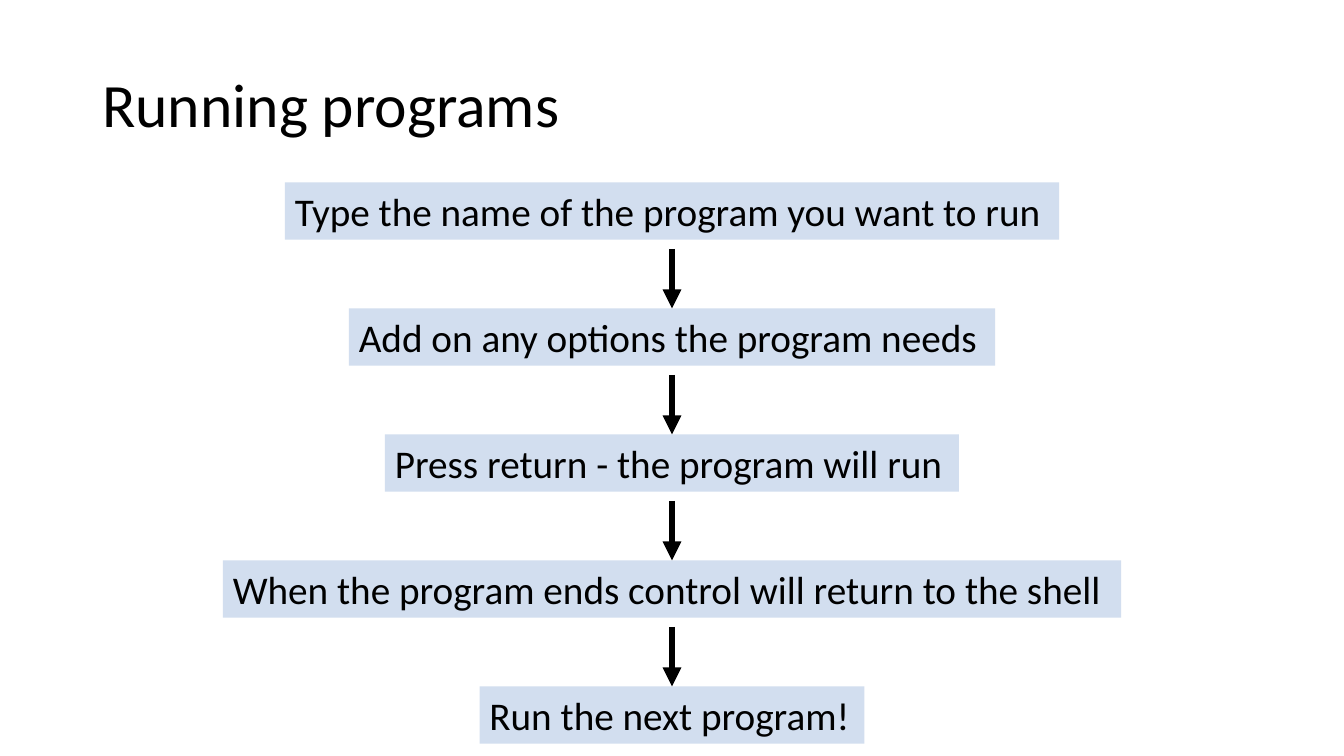
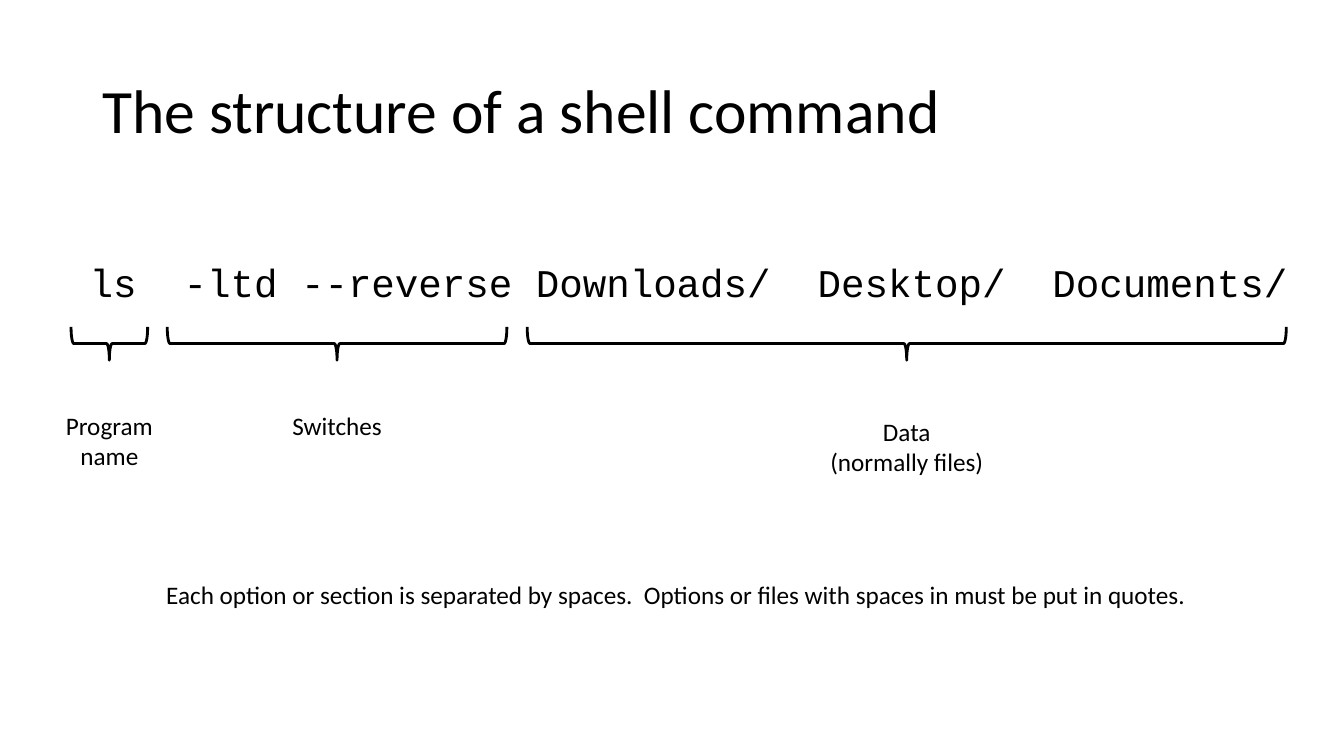
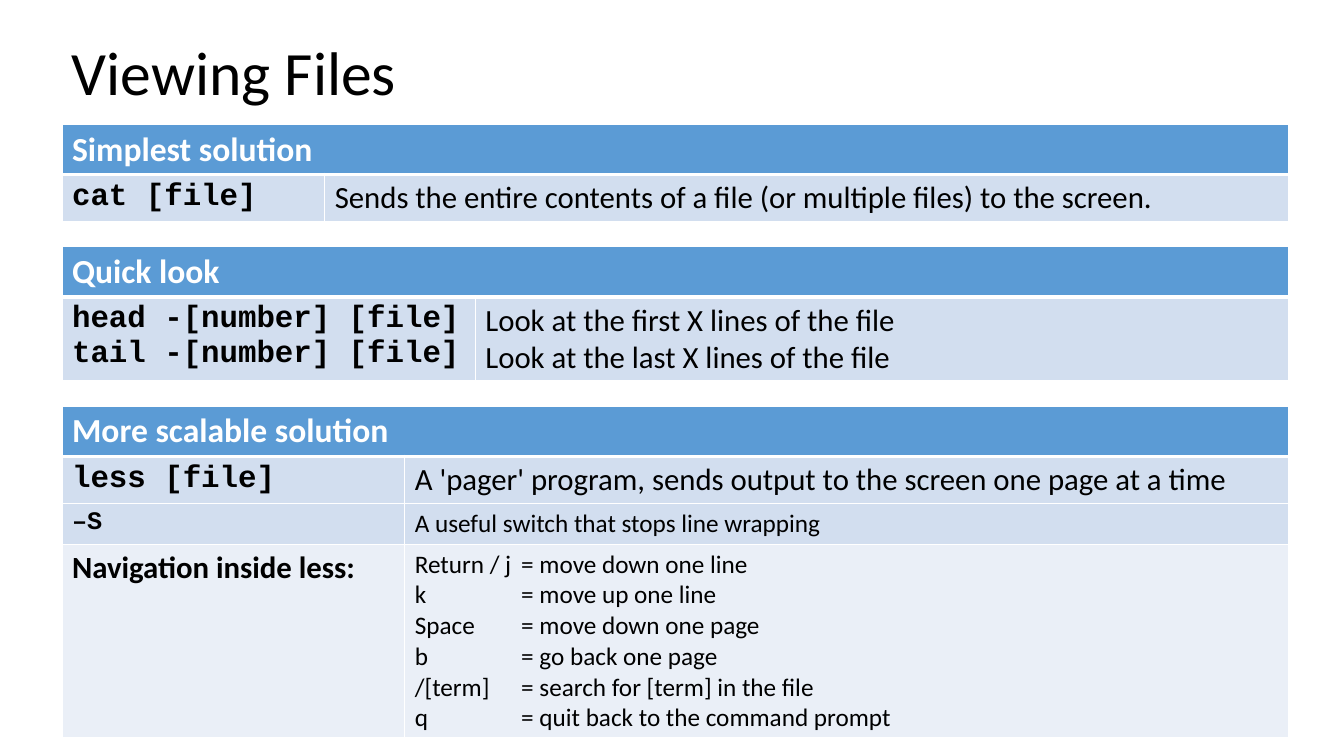
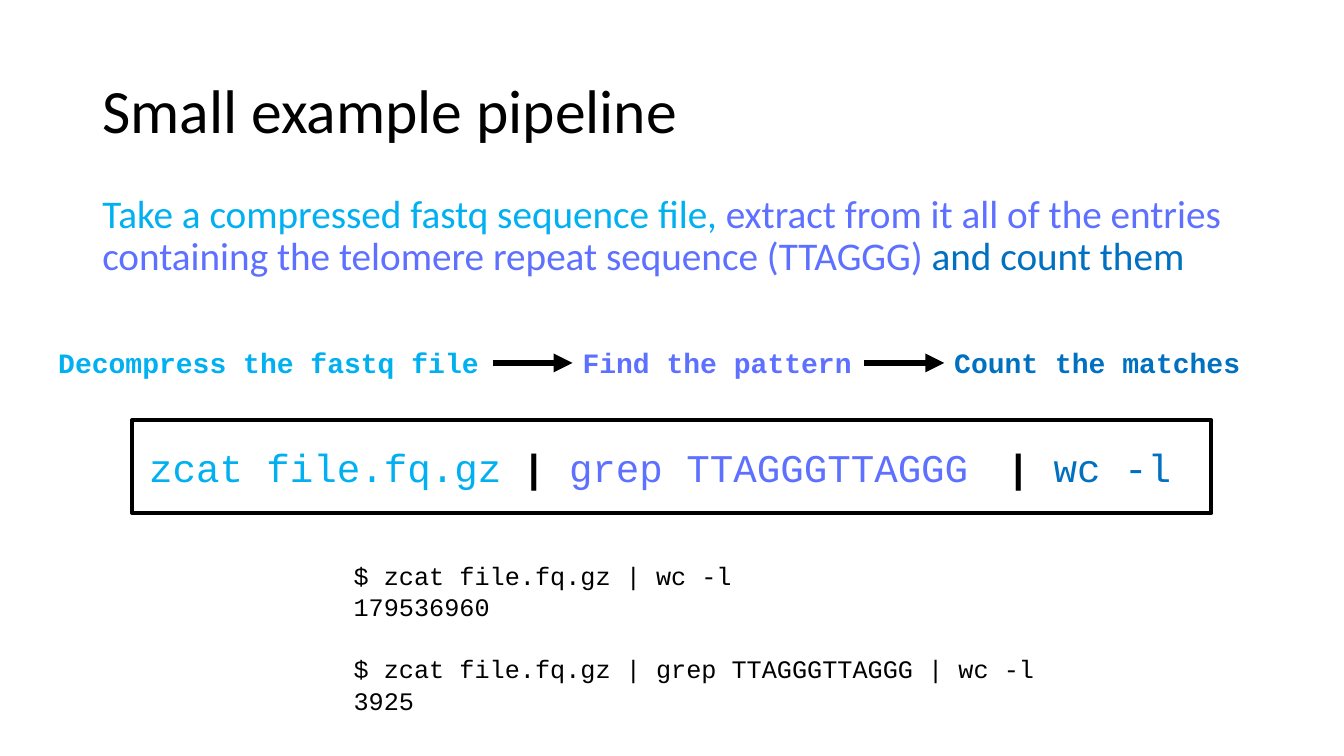
from dataclasses import dataclass
from itertools import pairwise

from lxml.etree import SubElement
from pptx import Presentation
from pptx.dml.color import RGBColor
from pptx.enum.shapes import MSO_CONNECTOR, MSO_SHAPE
from pptx.enum.text import MSO_ANCHOR, PP_ALIGN
from pptx.oxml.ns import qn
from pptx.shapes.autoshape import Shape
from pptx.shapes.connector import Connector
from pptx.slide import Slide
from pptx.table import _Cell as Cell
from pptx.text.text import TextFrame
from pptx.util import Pt

# Colours and fonts
BLACK = RGBColor(0x00, 0x00, 0x00)
WHITE = RGBColor(0xFF, 0xFF, 0xFF)
HEADER_BLUE = RGBColor(0x5B, 0x9B, 0xD5)
PALE_BLUE = RGBColor(0xD2, 0xDE, 0xEF)
FAINT_BLUE = RGBColor(0xEA, 0xEF, 0xF7)
SKY = RGBColor(0x00, 0xB0, 0xF0)
VIOLET = RGBColor(0x5D, 0x70, 0xFF)
DEEP_BLUE = RGBColor(0x00, 0x70, 0xC0)
SANS = "Calibri"
MONO = "Courier New"

SLIDE_WIDTH, SLIDE_HEIGHT = 960, 540
CENTRE = SLIDE_WIDTH / 2


@dataclass(frozen=True)
class Run:
    text: str
    size: float = 18
    font: str = SANS
    color: RGBColor = BLACK
    bold: bool = False


@dataclass(frozen=True)
class Box:
    left: float
    top: float
    width: float
    height: float

    def lengths(self) -> list[Pt]:
        return [Pt(v) for v in (self.left, self.top, self.width, self.height)]


@dataclass(frozen=True)
class Step:
    text: str
    width: float


@dataclass(frozen=True)
class CommandPart:
    label: list[str]
    left: float
    width: float
    label_top: float


@dataclass(frozen=True)
class Row:
    height: float
    command: list[Run]
    meaning: list[Run]
    fill: RGBColor = PALE_BLUE


@dataclass(frozen=True)
class CommandTable:
    heading: str
    top: float
    command_width: float
    rows: list[Row]


# Shared drawing functions
def write(frame: TextFrame, paragraphs: list[list[Run]], **layout) -> None:
    """Fill a frame; layout holds paragraph attributes."""
    frame.word_wrap = True
    for index, runs in enumerate(paragraphs):
        paragraph = frame.add_paragraph() if index else frame.paragraphs[0]
        for attribute, value in ({"alignment": PP_ALIGN.LEFT} | layout).items():
            setattr(paragraph, attribute, value)
        for item in runs:
            run = paragraph.add_run()
            run.text = item.text
            run.font.color.rgb = item.color
            values = {"name": item.font, "size": Pt(item.size), "bold": item.bold}
            for attribute, value in values.items():
                setattr(run.font, attribute, value)


def add_text(slide: Slide, box: Box, paragraphs: list[list[Run]], **layout) -> Shape:
    text = slide.shapes.add_textbox(*box.lengths())
    write(text.text_frame, paragraphs, **layout)
    return text


def add_title(slide: Slide, title: str, box: Box = Box(66, 29, 828, 104)) -> None:
    heading = add_text(slide, box, [[Run(title, 44)]], line_spacing=0.9)
    heading.text_frame.vertical_anchor = MSO_ANCHOR.MIDDLE


def add_outline(slide: Slide, kind: MSO_SHAPE, box: Box, weight: float) -> Shape:
    outline = slide.shapes.add_shape(kind, *box.lengths())
    outline.shadow.inherit = False
    outline.fill.background()
    outline.line.color.rgb = BLACK
    outline.line.width = Pt(weight)
    return outline


def add_arrow(slide: Slide, x: float, y: float) -> Connector:
    """Start an arrow at a point; the caller joins its ends."""
    arrow = slide.shapes.add_connector(MSO_CONNECTOR.STRAIGHT, Pt(x), Pt(y), Pt(x), Pt(y))
    arrow.line.color.rgb = BLACK
    arrow.line.width = Pt(4.5)
    SubElement(arrow.line._get_or_add_ln(), qn("a:tailEnd"), type="triangle")
    SubElement(arrow._element.spPr, qn("a:effectLst"))
    return arrow


# Slide 1: flow of steps
STEPS = [
    Step("Type the name of the program you want to run", 553),
    Step("Add on any options the program needs", 461.5),
    Step("Press return - the program will run", 410),
    Step("When the program ends control will return to the shell", 641.5),
    Step("Run the next program!", 275),
]
STEP_TOP, STEP_PITCH, STEP_HEIGHT = 130.3, 90, 41
ARROW_LENGTH = 42.5


def draw_running_programs(slide: Slide) -> None:
    add_title(slide, "Running programs", Box(66, 24.5, 828, 104))
    for index, step in enumerate(STEPS):
        top = STEP_TOP + index * STEP_PITCH
        box = Box(CENTRE - step.width / 2, top, step.width, STEP_HEIGHT)
        panel = slide.shapes.add_shape(MSO_SHAPE.RECTANGLE, *box.lengths())
        panel.shadow.inherit = False
        panel.fill.solid()
        panel.fill.fore_color.rgb = PALE_BLUE
        panel.line.fill.background()
        panel.text_frame.vertical_anchor = MSO_ANCHOR.TOP
        write(panel.text_frame, [[Run(step.text, 28)]])
        if index:
            add_arrow(slide, CENTRE, top - ARROW_LENGTH).end_connect(panel, 0)


# Slide 2: braces under a command
COMMAND_PARTS = [
    CommandPart(["Program", "name"], 50.8, 54.7, 289.4),
    CommandPart(["Switches"], 119.5, 242.6, 289.4),
    CommandPart(["Data", "(normally files)"], 376.6, 542.2, 293.8),
]
BRACE_DEPTH, BRACE_MIDDLE = 23.8, 245.4
LABEL_WIDTH = 200


def draw_command_structure(slide: Slide) -> None:
    add_title(slide, "The structure of a shell command")
    command = "ls  -ltd --reverse Downloads/  Desktop/  Documents/"
    add_text(slide, Box(57, 180.7, 890, 41), [[Run(command, 28, MONO)]])
    for part in COMMAND_PARTS:
        middle = part.left + part.width / 2
        # The brace is turned, so its height is the width it spans
        brace = Box(middle - BRACE_DEPTH / 2, BRACE_MIDDLE - part.width / 2,
                    BRACE_DEPTH, part.width)
        add_outline(slide, MSO_SHAPE.LEFT_BRACE, brace, 2).rotation = 270
        add_text(slide, Box(middle - LABEL_WIDTH / 2, part.label_top, LABEL_WIDTH, 52),
                 [[Run(line)] for line in part.label], alignment=PP_ALIGN.CENTER)
    advice = ("Each option or section is separated by spaces.  "
              "Options or files with spaces in must be put in quotes.")
    add_text(slide, Box(111.6, 410.4, 752, 29), [[Run(advice)]])


# Slide 3: command tables
def code(text: str, size: float = 22) -> Run:
    return Run(text, size, MONO, bold=True)


LESS_KEYS = {
    "Return / j": "move down one line",
    "k": "move up one line",
    "Space": "move down one page",
    "b": "go back one page",
    "/[term]": "search for [term] in the file",
    "q": "quit back to the command prompt",
}
COMMAND_TABLES = [
    CommandTable("Simplest solution", 88.6, 187.7, [
        Row(33, [code("cat [file]")],
            [Run("Sends the entire contents of a file (or multiple files) to the screen.", 22)]),
    ]),
    CommandTable("Quick look", 176, 295.2, [
        Row(60, [code("head -[number] [file]"), code("tail -[number] [file]")],
            [Run("Look at the first X lines of the file", 22),
             Run("Look at the last X lines of the file", 22)]),
    ]),
    CommandTable("More scalable solution", 290, 244.8, [
        Row(33, [code("less [file]")],
            [Run("A 'pager' program, sends output to the screen one page at a time", 22)]),
        Row(29, [code("–S", 18)], [Run("A useful switch that stops line wrapping")]),
        Row(138, [Run("Navigation inside less:", 22, bold=True)],
            [Run(f"{key}\t= {action}") for key, action in LESS_KEYS.items()], FAINT_BLUE),
    ]),
]
TABLE_LEFT, TABLE_WIDTH, HEADING_HEIGHT = 44.3, 876.5, 36
KEY_TAB = 76


def fill_cell(cell: Cell, lines: list[Run], fill: RGBColor, bottom: float = 1,
              top: float = 1) -> None:
    write(cell.text_frame, [[line] for line in lines])
    for paragraph in cell.text_frame.paragraphs:
        if "\t" in "".join(run.text for run in paragraph.runs):
            stops = SubElement(paragraph._p.get_or_add_pPr(), qn("a:tabLst"))
            SubElement(stops, qn("a:tab"), pos=str(Pt(KEY_TAB)), algn="l")
    properties = cell._tc.get_or_add_tcPr()
    for side, weight in {"L": 1, "R": 1, "T": top, "B": bottom}.items():
        border = SubElement(properties, qn(f"a:ln{side}"), w=str(Pt(weight)))
        paint = SubElement(border, qn("a:solidFill"))
        SubElement(paint, qn("a:srgbClr"), val=str(WHITE))
    cell.fill.solid()
    cell.fill.fore_color.rgb = fill


def add_command_table(slide: Slide, content: CommandTable) -> None:
    heights = [HEADING_HEIGHT] + [row.height for row in content.rows]
    box = Box(TABLE_LEFT, content.top, TABLE_WIDTH, sum(heights))
    table = slide.shapes.add_table(len(heights), 2, *box.lengths()).table
    widths = (content.command_width, TABLE_WIDTH - content.command_width)
    for column, width in zip(table.columns, widths):
        column.width = Pt(width)
    for row, height in zip(table.rows, heights):
        row.height = Pt(height)
    table.cell(0, 0).merge(table.cell(0, 1))
    heading = Run(content.heading, 24, color=WHITE, bold=True)
    fill_cell(table.cell(0, 0), [heading], HEADER_BLUE, bottom=3)
    for index, row in enumerate(content.rows, start=1):
        for column, lines in enumerate((row.command, row.meaning)):
            fill_cell(table.cell(index, column), lines, row.fill, top=3 if index == 1 else 1)


def draw_viewing_files(slide: Slide) -> None:
    add_title(slide, "Viewing Files", Box(44.3, 19.4, 834.5, 68.4))
    for content in COMMAND_TABLES:
        add_command_table(slide, content)


# Slide 4: pipeline
STAGES = [
    ("Decompress the fastq file", 317.5, SKY),
    ("Find the pattern", 208.5, VIOLET),
    ("Count the matches", 220.5, DEEP_BLUE),
]
STAGE_LEFT, STAGE_TOP, STAGE_HEIGHT, STAGE_GAP = 34.5, 243.5, 31.5, 57
PIPE = Run("| ", 28, MONO, bold=True)
PIPELINE = [
    (99.4, 286.6, [Run("zcat file.fq.gz", 28, MONO, SKY)]),
    (365.8, 337, [PIPE, Run("grep TTAGGGTTAGGG", 28, MONO, VIOLET)]),
    (712, 135, [PIPE, Run("wc -l", 28, MONO, DEEP_BLUE)]),
]
SESSIONS = [
    ["$ zcat file.fq.gz | wc -l", "179536960"],
    ["$ zcat file.fq.gz | grep TTAGGGTTAGGG | wc -l", "3925"],
]


def draw_pipeline(slide: Slide) -> None:
    add_title(slide, "Small example pipeline")
    task = [
        Run("Take a compressed fastq sequence file, ", 28, color=SKY),
        Run("extract from it all of the entries containing the telomere repeat "
            "sequence (TTAGGG) ", 28, color=VIOLET),
        Run("and count them", 28, color=DEEP_BLUE),
    ]
    add_text(slide, Box(66, 135.4, 842.4, 75.6), [task], line_spacing=0.9)

    # Stages joined by arrows
    labels = []
    left = STAGE_LEFT
    for name, width, color in STAGES:
        box = Box(left, STAGE_TOP, width, STAGE_HEIGHT)
        labels.append(add_text(slide, box, [[Run(name, 20, MONO, color, True)]]))
        left += width + STAGE_GAP
    for before, after in pairwise(labels):
        arrow = add_arrow(slide, STAGE_LEFT, STAGE_TOP)
        arrow.begin_connect(before, 3)
        arrow.end_connect(after, 1)

    # Framed command
    for left, width, runs in PIPELINE:
        add_text(slide, Box(left, 313.4, width, 41), [runs])
    add_outline(slide, MSO_SHAPE.RECTANGLE, Box(94.3, 300.2, 771, 66.2), 3)

    # Terminal sessions
    lines = [[Run(line, font=MONO)] for session in SESSIONS for line in session]
    terminal = add_text(slide, Box(245.5, 395.3, 520.6, 116.6), lines, line_spacing=1.05)
    terminal.text_frame.paragraphs[len(SESSIONS[0])].space_before = Pt(21.4)


def main() -> None:
    deck = Presentation()
    deck.slide_width, deck.slide_height = Pt(SLIDE_WIDTH), Pt(SLIDE_HEIGHT)
    blank = deck.slide_layouts[6]
    for draw in (draw_running_programs, draw_command_structure,
                 draw_viewing_files, draw_pipeline):
        draw(deck.slides.add_slide(blank))
    deck.save("out.pptx")


if __name__ == "__main__":
    main()
